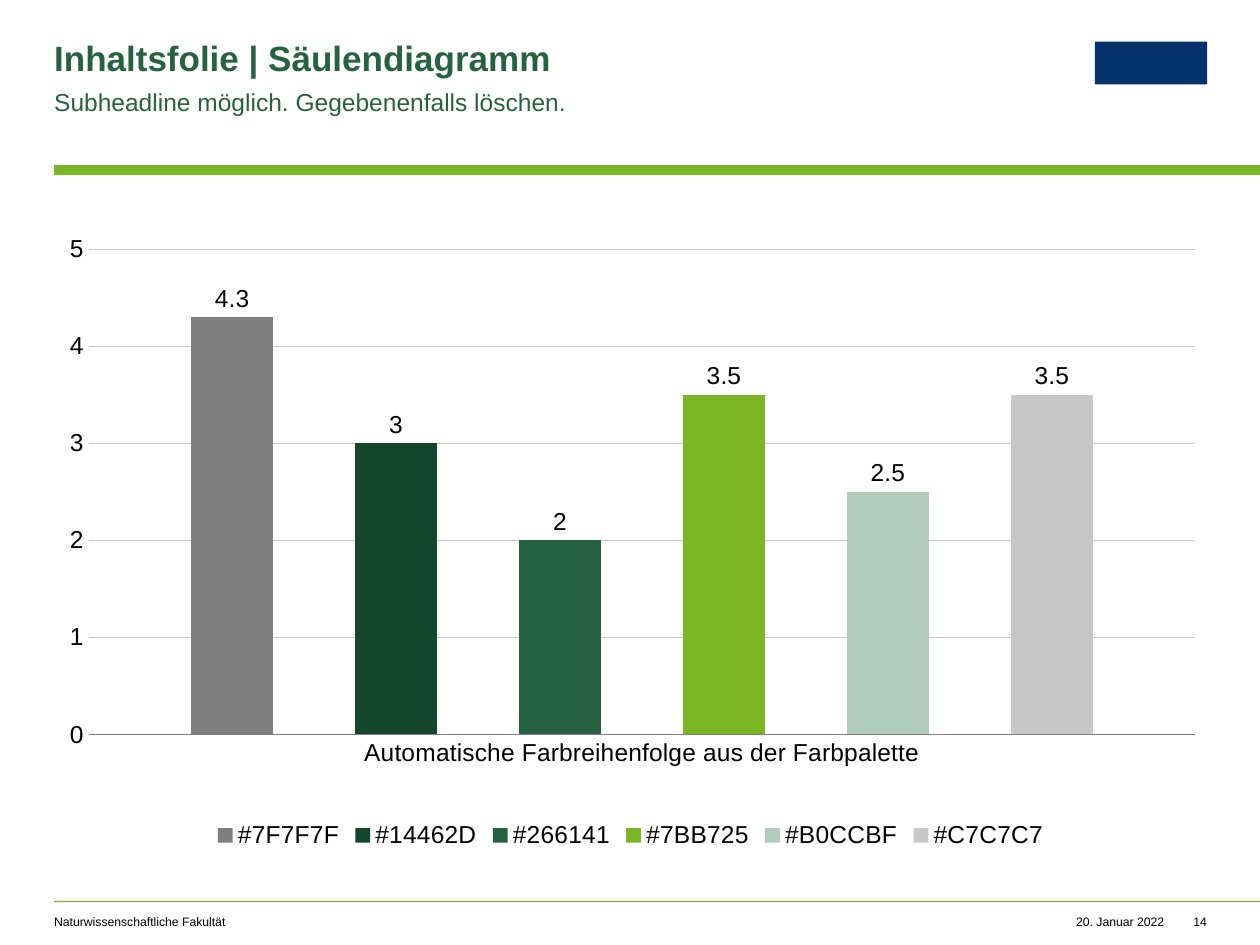
from dataclasses import dataclass

import pptx
import pptx.chart.data
import pptx.dml.color
import pptx.enum.chart
import pptx.enum.shapes
import pptx.enum.text
import pptx.oxml
import pptx.oxml.ns
import pptx.util

Inches = pptx.util.Inches
Pt = pptx.util.Pt
ALIGN = pptx.enum.text.PP_ALIGN


@dataclass(frozen=True)
class Theme:
    font: str = "Arial"
    black: str = "000000"
    gray: str = "7F7F7F"
    dark_green: str = "14462D"
    green: str = "266141"
    lime: str = "7BB725"
    mint: str = "B0CCBF"
    silver: str = "C7C7C7"
    navy: str = "04316A"
    title_size: int = 20
    body_size: int = 14
    footer_size: int = 7


def rgb(color):
    return pptx.dml.color.RGBColor.from_string(color)


def apply(obj, values):
    for name, value in values.items():
        setattr(obj, name, value)


class SlideBuilder:
    def __init__(self, slide, theme):
        self.s = slide
        self.theme = theme

    def font(self, font, size, color, bold=False):
        apply(font, {"name": self.theme.font, "size": Pt(size), "bold": bold})
        font.color.rgb = rgb(color)

    def fill_text(self, sp, box, text, size, color, bold=False, wrap=True,
                  right_inset=0, **paragraph_format):
        apply(sp, dict(zip(("left", "top", "width", "height"), map(Inches, box))))
        tf = sp.text_frame
        apply(tf, {
            "margin_left": 0, "margin_top": 0, "margin_bottom": 0,
            "margin_right": Inches(right_inset), "word_wrap": wrap,
            "auto_size": pptx.enum.text.MSO_AUTO_SIZE.NONE,
            "vertical_anchor": pptx.enum.text.MSO_ANCHOR.TOP,
        })
        p = tf.paragraphs[0]
        apply(p, {"alignment": ALIGN.LEFT, **paragraph_format})
        r = p.add_run()
        r.text = text
        self.font(r.font, size, color, bold)

    def title(self, box, text):
        self.fill_text(self.s.shapes.title, box, text, self.theme.title_size,
                       self.theme.green, bold=True, line_spacing=0.9)

    def text(self, box, text, size, color, **options):
        sp = self.s.shapes.add_textbox(*map(Inches, box))
        self.fill_text(sp, box, text, size, color, **options)

    def bar(self, box, color):
        sp = self.s.shapes.add_shape(
            pptx.enum.shapes.MSO_SHAPE.RECTANGLE, *map(Inches, box))
        sp.shadow.inherit = False
        sp.fill.solid()
        sp.fill.fore_color.rgb = rgb(color)
        sp.line.fill.background()

    def column_chart(self, box, category, columns, plot_box):
        data = pptx.chart.data.CategoryChartData()
        data.categories = [category]
        for color, value in columns:
            data.add_series(f"#{color}", [value])
        chart = self.s.shapes.add_chart(
            pptx.enum.chart.XL_CHART_TYPE.COLUMN_CLUSTERED,
            *map(Inches, box), data).chart
        apply(chart, {"has_title": False, "has_legend": True})
        self.font(chart.font, self.theme.body_size, self.theme.black)
        apply(chart.legend, {
            "position": pptx.enum.chart.XL_LEGEND_POSITION.BOTTOM,
            "include_in_layout": False})
        self.font(chart.legend.font, self.theme.body_size, self.theme.black)
        self.axes(chart)
        plot = chart.plots[0]
        apply(plot, {"gap_width": 250, "overlap": -100, "vary_by_categories": False})
        for series, (color, _) in zip(plot.series, columns):
            series.format.fill.solid()
            series.format.fill.fore_color.rgb = rgb(color)
            labels = series.data_labels
            apply(labels, {
                "show_value": True,
                "position": pptx.enum.chart.XL_LABEL_POSITION.OUTSIDE_END})
            self.font(labels.font, self.theme.body_size, self.theme.black)
        self.plot_layout(chart, plot_box)

    def axes(self, chart):
        tick_none = pptx.enum.chart.XL_TICK_MARK.NONE
        for axis in (chart.category_axis, chart.value_axis):
            apply(axis, {"major_tick_mark": tick_none, "minor_tick_mark": tick_none})
            self.font(axis.tick_labels.font, self.theme.body_size, self.theme.black)
        values = chart.value_axis
        apply(values, {"minimum_scale": 0, "maximum_scale": 5, "major_unit": 1,
                       "has_major_gridlines": True})
        values.format.line.fill.background()
        for line, color in ((chart.category_axis.format.line, self.theme.gray),
                            (values.major_gridlines.format.line, self.theme.silver)):
            line.color.rgb = rgb(color)
            line.width = Pt(0.5)

    def plot_layout(self, chart, box):
        qn = pptx.oxml.ns.qn
        area = chart.plots[0]._element.getparent()
        for old in area.findall(qn("c:layout")):
            area.remove(old)
        settings = [("layoutTarget", "inner"), ("xMode", "edge"), ("yMode", "edge"),
                    *zip("xywh", box)]
        tags = "".join(f'<c:{name} val="{value}"/>' for name, value in settings)
        area.insert(0, pptx.oxml.parse_xml(
            f'<c:layout {pptx.oxml.ns.nsdecls("c")}>'
            f"<c:manualLayout>{tags}</c:manualLayout></c:layout>"))


def main():
    prs = pptx.Presentation()
    apply(prs, {"slide_width": Inches(10), "slide_height": Inches(7.5)})
    theme = Theme()
    b = SlideBuilder(prs.slides.add_slide(prs.slide_layouts[5]), theme)
    left, right = 0.43, 9.58

    b.bar((left, 1.31, 10 - left, 0.08), theme.lime)
    b.bar((left, 7.15, 10 - left, 0.01), theme.lime)
    b.bar((8.69, 0.33, right - 8.69, 0.34), theme.navy)

    b.title((left, 0.33, 5.61, 0.3), "Inhaltsfolie | Säulendiagramm")
    b.text((left, 0.67, 5.61, 0.24), "Subheadline möglich. Gegebenenfalls löschen.",
           theme.body_size, theme.green, right_inset=0.39,
           line_spacing=1.1, space_after=Pt(8))

    columns = [(theme.gray, 4.3), (theme.dark_green, 3), (theme.green, 2),
               (theme.lime, 3.5), (theme.mint, 2.5), (theme.silver, 3.5)]
    b.column_chart((left, 1.78, right - left, 5),
                   "Automatische Farbreihenfolge aus der Farbpalette",
                   columns, (0.03, 0.04, 0.96, 0.77))

    footers = [
        (left, 4.49, "Naturwissenschaftliche Fakultät", True, ALIGN.LEFT),
        (8.53, 0.71, "20. Januar 2022", False, ALIGN.RIGHT),
        (9.38, 0.2, "14", False, ALIGN.RIGHT),
    ]
    for x, width, text, wrap, alignment in footers:
        b.text((x, 7.26, width, 0.12), text, theme.footer_size, theme.black,
               wrap=wrap, alignment=alignment)

    prs.save("out.pptx")


if __name__ == "__main__":
    main()
